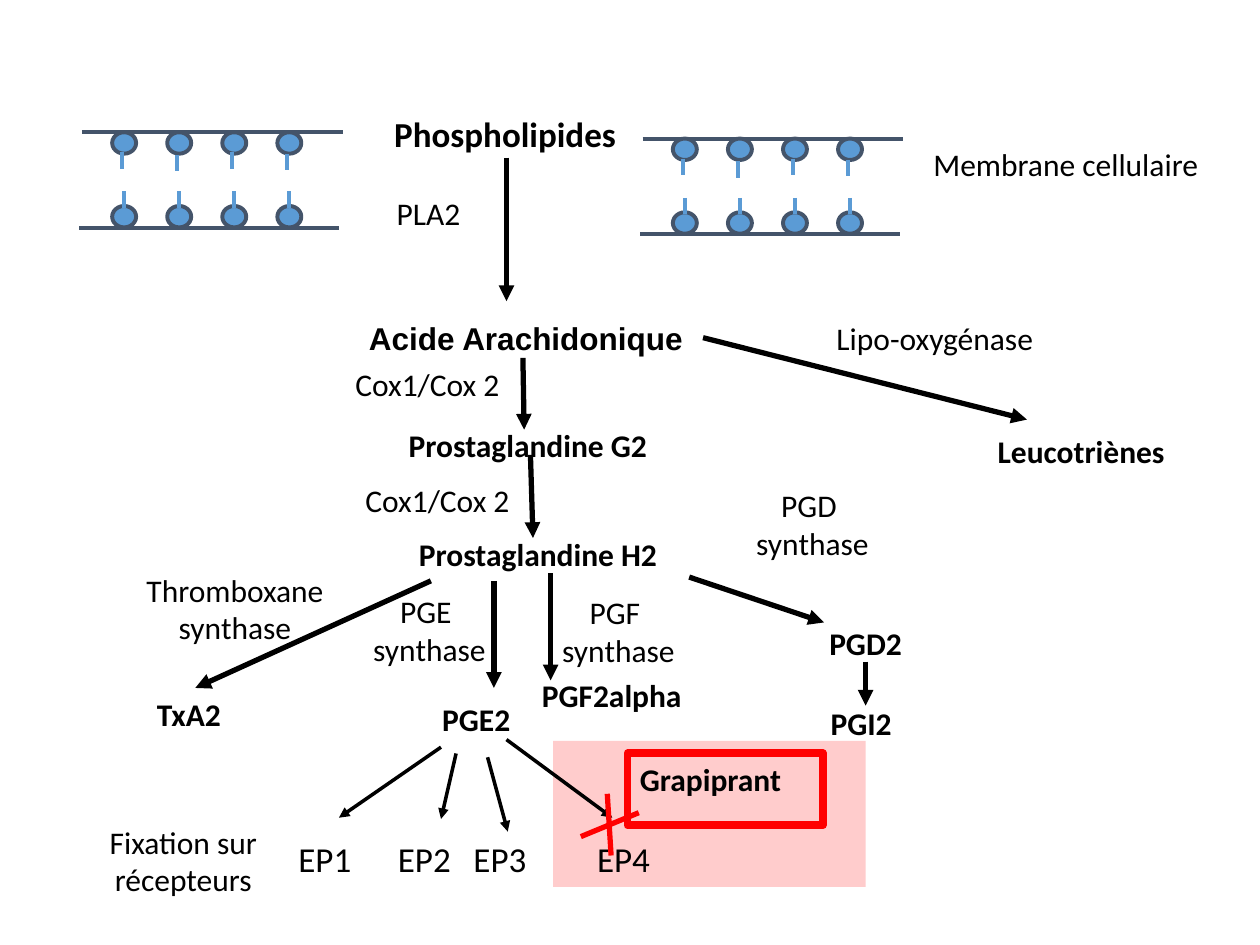
from pptx import Presentation
from pptx import util as u
from pptx.dml.color import RGBColor
from pptx.enum import shapes, text
from pptx.oxml import parse_xml
from pptx.oxml.ns import nsdecls

BLACK = RGBColor(0, 0, 0)
WHITE = RGBColor(255, 255, 255)
RED = RGBColor(255, 0, 0)
PINK = RGBColor(0xFF, 0xCC, 0xCC)
SLATE = RGBColor(0x44, 0x54, 0x6A)
BLUE = RGBColor(0x5B, 0x9B, 0xD5)

COLS, ROWS = 100, 75
WIDE, HIGH = u.Inches(10), u.Inches(7.5)


def col(n):
    return round(WIDE * n / COLS)


def row(n):
    return round(HIGH * n / ROWS)


class Region:
    """Draws parts, in grid units, relative to its left top corner."""

    def __init__(self, slide, left, top):
        self.shapes = slide.shapes
        self.left, self.top = left, top

    def place(self, x, y):
        return col(self.left + x), row(self.top + y)

    def line(self, x1, y1, x2, y2, color=BLACK, width=3.0, head=False):
        link = self.shapes.add_connector(
            shapes.MSO_CONNECTOR.STRAIGHT, *self.place(x1, y1), *self.place(x2, y2))
        link.line.color.rgb = color
        link.line.width = u.Pt(width)
        if head:
            link.line._get_or_add_ln().append(
                parse_xml(f'<a:tailEnd type="triangle" {nsdecls("a")}/>'))
        link._element.spPr.append(parse_xml(f'<a:effectLst {nsdecls("a")}/>'))

    def arrow(self, x1, y1, x2, y2, width=3.0):
        self.line(x1, y1, x2, y2, width=width, head=True)

    def shape(self, kind, x, y, w, h, fill=None, edge=None, width=2.25):
        item = self.shapes.add_shape(kind, *self.place(x, y), col(w), row(h))
        item.shadow.inherit = False
        if fill is None:
            item.fill.background()
        else:
            item.fill.solid()
            item.fill.fore_color.rgb = fill
        if edge is None:
            item.line.fill.background()
        else:
            item.line.color.rgb = edge
            item.line.width = u.Pt(width)
        return item

    def label(self, words, x, y, w, bold=False, mid=True, wrap=True, size=18, font="Calibri"):
        rows = 7.1 if "synthase" in words or "récepteurs" in words else size * 0.22
        box = self.shapes.add_textbox(*self.place(x, y), col(w), row(rows))
        write(box.text_frame, words, bold, mid, wrap, size, font)


def write(frame, words, bold=False, mid=True, wrap=True, size=18, font="Calibri"):
    frame.word_wrap = wrap
    frame.vertical_anchor = text.MSO_ANCHOR.TOP
    for i, part in enumerate(words.split("\n")):
        para = frame.add_paragraph() if i else frame.paragraphs[0]
        para.alignment = text.PP_ALIGN.CENTER if mid else text.PP_ALIGN.LEFT
        run = para.add_run()
        run.text = part
        run.font.name, run.font.size, run.font.bold = font, u.Pt(size), bold
        run.font.color.rgb = BLACK


def membrane(area):
    """Two facing rows of lipids between a pair of lines."""
    area.line(0.2, 0, 20.9, 0, SLATE, 2.25)
    area.line(0, 7.6, 20.6, 7.6, SLATE, 2.25)
    for y in (0, 5.85):
        for i in range(4):
            area.shape(shapes.MSO_SHAPE.OVAL, 2.6 + 4.37 * i, y, 1.9, 1.7, BLUE, SLATE)
    for i, drop in enumerate((0, 0.2, 0, 0.1)):
        x = 3.4 + 4.37 * i
        area.line(x, 1.6 + drop, x, 2.9 + drop, BLUE, 2.25)
        area.line(x + 0.15, 4.7, x + 0.15, 6, BLUE, 2.25)


def release(area):
    """Phospholipids to arachidonic acid."""
    area.label("Phospholipides", 30.3, 0, 19.8, True, False, False, 20)
    area.label("PLA2", 30.5, 6.5, 7.4, mid=False)
    area.label("Membrane cellulaire", 73.1, 2.6, 23.3, mid=False, wrap=False)
    area.arrow(40.2, 4.1, 40.2, 15.5)


def cascade(area):
    """Arachidonic acid to its end products."""
    area.label("Acide Arachidonique", 28.3, 0, 27.2, True, False, False, font="Arial")
    area.label("Lipo-oxygénase", 65.4, 0, 17.8, mid=False, wrap=False)
    area.label("Leucotriènes", 78.2, 9, 19.6, True, False)
    products = (
        ("Prostaglandine G2", 31.1, 8.5, 21.6),
        ("Prostaglandine H2", 31.9, 17.2, 21.6),
        ("PGF2alpha", 41.3, 28.4, 14.5),
        ("PGD2", 62.4, 24.2, 12.6),
        ("PGI2", 58.5, 30.6, 19.7),
        ("PGE2", 33, 30.3, 9.6),
        ("TxA2", 8.7, 29.9, 12.6))
    for item in products:
        area.label(*item, bold=True)
    enzymes = (
        ("Cox1/Cox 2 ", 24.8, 3.7, 18.8),
        ("Cox1/Cox 2 ", 26.4, 12.9, 17.2),
        ("Thromboxane synthase", 7, 20, 23.3),
        ("PGE\n synthase", 23.2, 21.7, 21.2),
        ("PGF\n synthase", 42.9, 21.8, 11.8),
        ("PGD\n synthase", 58.3, 13.3, 11.8))
    for item in enzymes:
        area.label(*item)
    steps = (
        (55.8, 2, 81.5, 8.5), (41.5, 3.6, 41.6, 9.3), (42.1, 11.3, 42.3, 17.9),
        (34.2, 21.3, 15.5, 29.8), (39.2, 21.3, 39.2, 29.8), (43.7, 20.7, 43.7, 29.2),
        (54.7, 21, 65.4, 24.6), (68.7, 27.7, 68.7, 31.2))
    for ends in steps:
        area.arrow(*ends)


def receptors(area):
    """PGE2 receptors, with the EP4 path blocked."""
    area.shape(shapes.MSO_SHAPE.RECTANGLE, 43.9, 0.1, 24.8, 11.6, PINK)
    paths = (
        (35, 0.6, 26.9, 6.2), (36.2, 1.1, 35, 6.3),
        (38.7, 1.4, 40.3, 7.3), (40.2, 0, 48.6, 6.2))
    for ends in paths:
        area.arrow(*ends, width=2)
    for i, x in enumerate((22.7, 30.6, 36.6, 46.4), 1):
        area.label(f"EP{i}", x, 7.3, 6.3 if i == 1 else 7.3, mid=False, wrap=False, size=20)
    area.line(50.7, 5.8, 46.1, 7.7, RED)
    area.line(48.2, 4.3, 48.5, 9.2, RED)
    drug = area.shape(shapes.MSO_SHAPE.RECTANGLE, 49.8, 1.1, 15.5, 5.7, edge=RED, width=4.5)
    write(drug.text_frame, "Grapiprant", True, False)
    area.label("Fixation sur récepteurs", 5, 6.1, 19.1)


def main():
    deck = Presentation()
    deck.slide_width, deck.slide_height = WIDE, HIGH
    slide = deck.slides.add_slide(deck.slide_layouts[6])
    slide.background.fill.solid()
    slide.background.fill.fore_color.rgb = WHITE
    membrane(Region(slide, 6.3, 10.5))
    membrane(Region(slide, 50.8, 11))
    release(Region(slide, 0, 8.4))
    cascade(Region(slide, 0, 24.8))
    receptors(Region(slide, 0, 58.7))
    deck.save("out.pptx")


if __name__ == "__main__":
    main()
